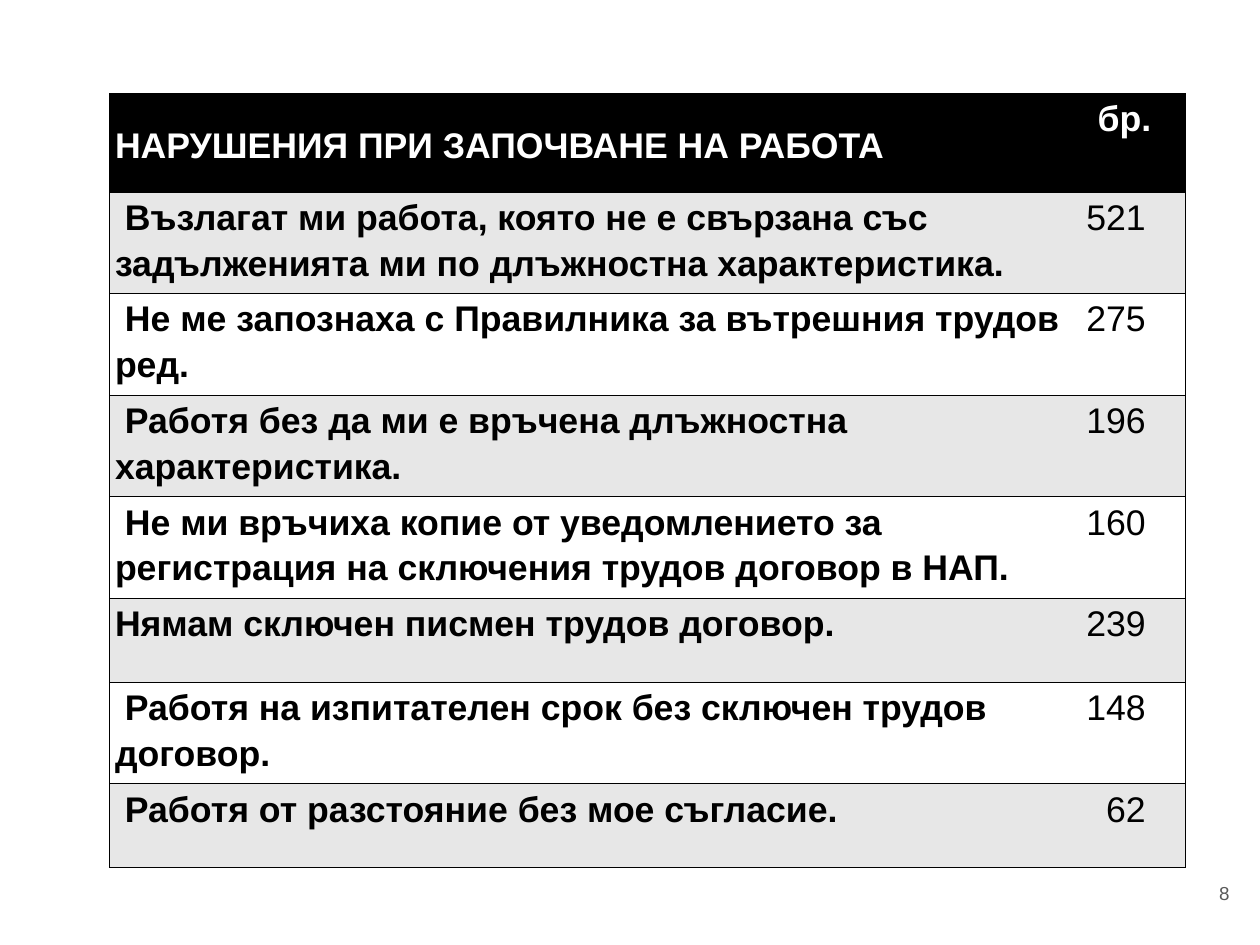
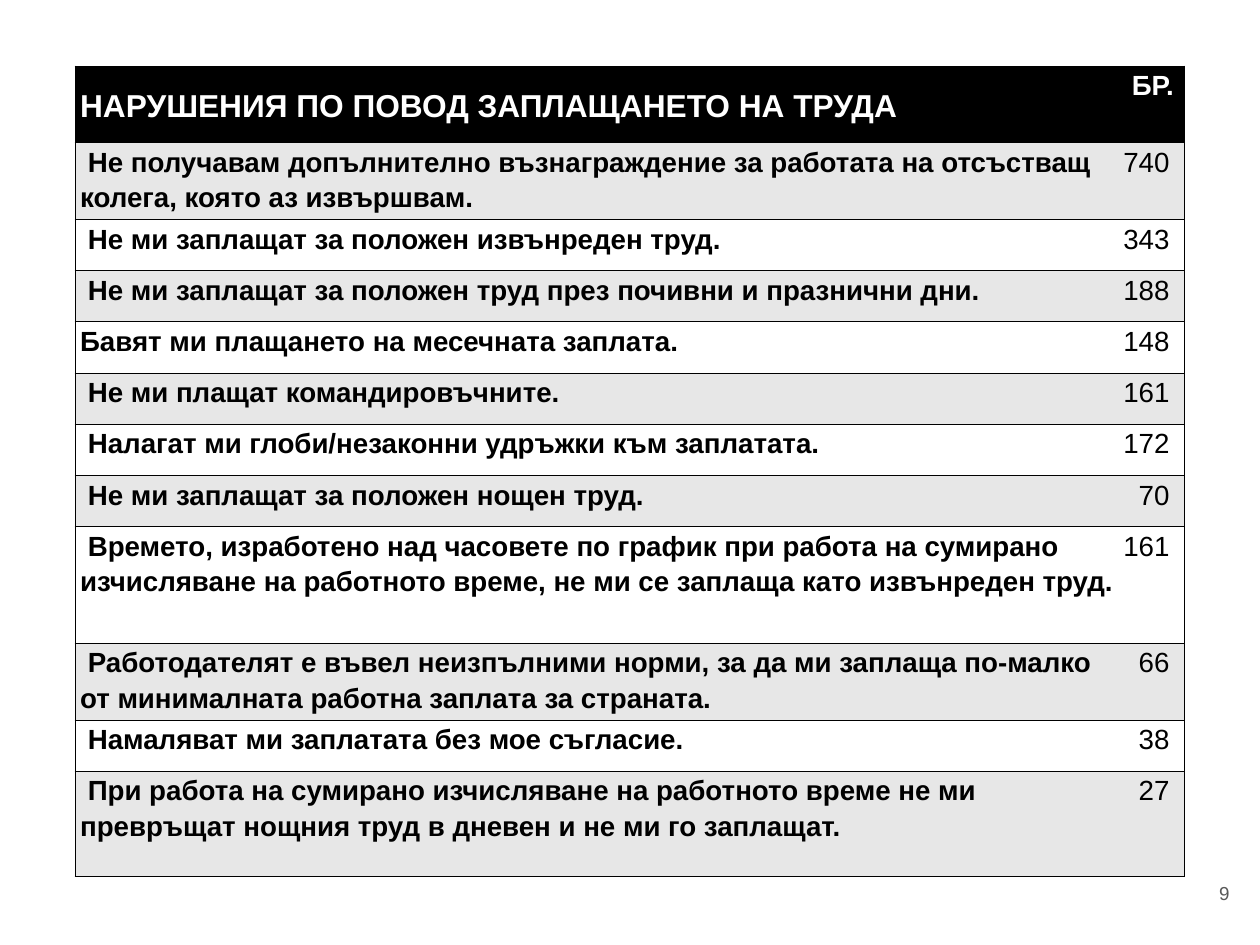
from dataclasses import dataclass

from lxml.etree import SubElement
from pptx import Presentation
from pptx.dml.color import RGBColor
from pptx.enum.text import MSO_ANCHOR as Anchor, PP_ALIGN as Align
from pptx.oxml.ns import qn
from pptx.util import Emu, Pt

BLACK = RGBColor(0x00, 0x00, 0x00)
WHITE = RGBColor(0xFF, 0xFF, 0xFF)
BAND = RGBColor(0xE7, 0xE7, 0xE7)
GREY = RGBColor(0x59, 0x59, 0x59)
FONT = "Arial"
NO_STYLE = "{2D5ABB26-0587-4C30-8999-92F81FD0307C}"
INSET = 7


@dataclass(frozen=True)
class Row:
    label: str
    count: int
    height: int


@dataclass(frozen=True)
class CountTable:
    page: int
    left: int
    top: int
    col_widths: tuple[int, int]
    heading: str
    heading_size: int
    unit: str
    size: int
    header_height: int
    count_margin: int
    rows: tuple[Row, ...]


TABLES = (
    CountTable(
        8, 148, 126, (1311, 139), "НАРУШЕНИЯ ПРИ ЗАПОЧВАНЕ НА РАБОТА", 36,
        " бр.", 36, 133, 54,
        (
            Row(" Възлагат ми работа, която не е свързана със задълженията ми "
                "по длъжностна характеристика.", 521, 137),
            Row(" Не ме запознаха с Правилника за вътрешния трудов ред.", 275, 137),
            Row(" Работя без да ми е връчена длъжностна характеристика.", 196, 137),
            Row(" Не ми връчиха копие от уведомлението за регистрация на "
                "сключения трудов договор в НАП.", 160, 137),
            Row("Нямам сключен писмен трудов договор.", 239, 113),
            Row(" Работя на изпитателен срок без сключен трудов договор.", 148, 137),
            Row(" Работя от разстояние без мое съгласие.", 62, 113),
        ),
    ),
    CountTable(
        9, 101, 89, (1407, 88), "НАРУШЕНИЯ ПО ПОВОД ЗАПЛАЩАНЕТО НА ТРУДА", 32,
        " БР.", 28, 103, 20,
        (
            Row(" Не получавам допълнително възнаграждение за работата на "
                "отсъстващ колега, която аз извършвам.", 740, 104),
            Row(" Не ми заплащат за положен извънреден труд.", 343, 69),
            Row(" Не ми заплащат за положен труд през почивни и празнични дни.", 188, 69),
            Row("Бавят ми плащането на месечната заплата.", 148, 69),
            Row(" Не ми плащат командировъчните.", 161, 69),
            Row(" Налагат ми глоби/незаконни удръжки към заплатата.", 172, 69),
            Row(" Не ми заплащат за положен нощен труд.", 70, 69),
            Row(" Времето, изработено над часовете по график при работа на "
                "сумирано изчисляване на работното време, не ми се заплаща "
                "като извънреден труд.", 161, 157),
            Row(" Работодателят е въвел неизпълними норми, за да ми заплаща "
                "по-малко от минималната работна заплата за страната.", 66, 104),
            Row(" Намаляват ми заплатата без мое съгласие.", 38, 69),
            Row(" При работа на сумирано изчисляване на работното време не ми "
                "превръщат нощния труд в дневен и не ми го заплащат.", 27, 142),
        ),
    ),
)


def px(n: int) -> Emu:
    return Emu(n * 9525)


def write(tf, text: str, *, size: int, color: RGBColor = BLACK, bold: bool = False,
          align: Align = Align.LEFT, spacing: float = 1.0) -> None:
    p = tf.paragraphs[0]
    p.alignment = align
    p.line_spacing = spacing
    r = p.add_run()
    r.text = text
    r.font.name = FONT
    r.font.size = Pt(size)
    r.font.bold = bold
    r.font.color.rgb = color


def set_borders(cell, outer_side: str) -> None:
    """Draw the top, bottom and one outer side, leaving the inner side open."""
    tc_pr = cell._tc.get_or_add_tcPr()
    for i, side in enumerate("LRTB"):
        ln = SubElement(tc_pr, qn(f"a:ln{side}"), w=str(Pt(1)))
        if side in outer_side + "TB":
            fill = SubElement(ln, qn("a:solidFill"))
            SubElement(fill, qn("a:srgbClr"), val=str(BLACK))
        else:
            SubElement(ln, qn("a:noFill"))
        tc_pr.insert(i, ln)


def fill_cell(cell, text: str, fill: RGBColor, outer_side: str, *,
              margins: tuple[int, int] = (INSET, INSET),
              anchor: Anchor = Anchor.TOP, **fmt) -> None:
    cell.fill.solid()
    cell.fill.fore_color.rgb = fill
    cell.margin_left, cell.margin_right = map(px, margins)
    cell.margin_top = cell.margin_bottom = 0
    cell.vertical_anchor = anchor
    write(cell.text_frame, text, spacing=1.15, **fmt)
    set_borders(cell, outer_side)


def add_count_table(s, spec: CountTable) -> None:
    heights = [spec.header_height, *(row.height for row in spec.rows)]
    frame = s.shapes.add_table(len(heights), 2, px(spec.left), px(spec.top),
                               px(sum(spec.col_widths)), px(sum(heights)))
    table = frame.table
    table._tbl.tblPr.find(qn("a:tableStyleId")).text = NO_STYLE
    table.horz_banding = False
    for column, width in zip(table.columns, spec.col_widths):
        column.width = px(width)
    for table_row, height in zip(table.rows, heights):
        table_row.height = px(height)

    fill_cell(table.cell(0, 0), spec.heading, BLACK, "L", anchor=Anchor.MIDDLE,
              size=spec.heading_size, color=WHITE, bold=True)
    fill_cell(table.cell(0, 1), spec.unit, BLACK, "R",
              size=spec.size, color=WHITE, bold=True)
    for i, row in enumerate(spec.rows, start=1):
        fill = BAND if i % 2 else WHITE
        fill_cell(table.cell(i, 0), row.label, fill, "L", size=spec.size, bold=True)
        fill_cell(table.cell(i, 1), str(row.count), fill, "R", size=spec.size,
                  margins=(0, spec.count_margin), align=Align.RIGHT)


def add_page_number(s, page: int) -> None:
    tf = s.shapes.add_textbox(px(1573), px(1155), px(102), px(98)).text_frame
    tf.word_wrap = True
    tf.vertical_anchor = Anchor.MIDDLE
    tf.margin_left = tf.margin_right = tf.margin_top = tf.margin_bottom = px(18)
    write(tf, str(page), size=19, color=GREY, align=Align.RIGHT)


def main() -> None:
    prs = Presentation()
    prs.slide_width, prs.slide_height = px(1698), px(1274)
    blank = prs.slide_layouts[6]
    for spec in TABLES:
        s = prs.slides.add_slide(blank)
        add_page_number(s, spec.page)
        add_count_table(s, spec)
    prs.save("out.pptx")


if __name__ == "__main__":
    main()
